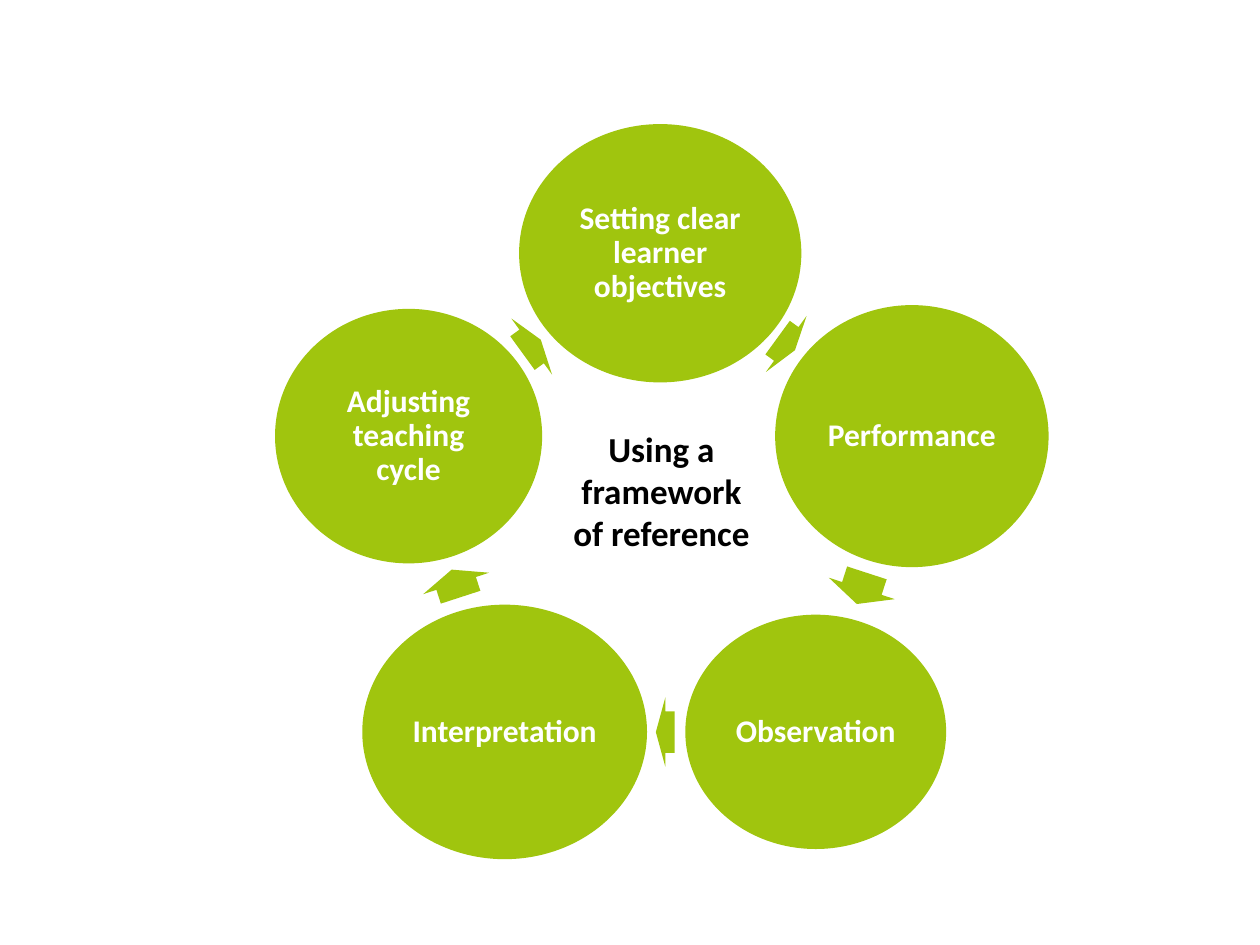
import math
import pptx
import pptx.util
import pptx.dml.color
import pptx.enum.shapes
import pptx.enum.text

Inches = pptx.util.Inches
Pt = pptx.util.Pt
RGBColor = pptx.dml.color.RGBColor
Shape = pptx.enum.shapes.MSO_SHAPE

GREEN = RGBColor(0xA0, 0xC5, 0x0E)
WHITE = RGBColor(0xFF, 0xFF, 0xFF)
BLACK = RGBColor(0x00, 0x00, 0x00)

STAGE_FONT = {"name": "Calibri", "size": Pt(18), "bold": True}
CAPTION_FONT = {"name": "Calibri", "size": Pt(20), "bold": True}
STAGE_PARAGRAPH = {"alignment": pptx.enum.text.PP_ALIGN.CENTER, "line_spacing": 0.9}
CAPTION_PARAGRAPH = {"alignment": pptx.enum.text.PP_ALIGN.CENTER}
STAGE_FRAME = {
    "word_wrap": True,
    "vertical_anchor": pptx.enum.text.MSO_ANCHOR.MIDDLE,
    **{f"margin_{side}": Inches(0.03) for side in ("left", "top", "right", "bottom")},
}
CAPTION_FRAME = {"word_wrap": True}

# label, circle width and height, arrow width, arrow offset from the ring's centre
STAGES = [
    ("Setting clear learner objectives", 2.24, 2.05, 0.17, (1.0, -1.38)),
    ("Performance", 2.17, 2.08, 0.26, (1.6, 0.56)),
    ("Observation", 2.07, 1.86, 0.15, (0.04, 1.7)),
    ("Interpretation", 2.26, 2.02, 0.23, (-1.62, 0.52)),
    ("Adjusting teaching cycle", 2.12, 2.02, 0.18, (-1.02, -1.36)),
]
ARROW_HEIGHT = 0.55


def apply_format(target, values):
    for name, value in values.items():
        setattr(target, name, value)


def write_text(box, text, frame_format, paragraph_format, font_format, color):
    frame = box.text_frame
    apply_format(frame, frame_format)
    para = frame.paragraphs[0]
    apply_format(para, paragraph_format)
    span = para.add_run()
    span.text = text
    apply_format(span.font, font_format)
    span.font.color.rgb = color


def add_centred_shape(shapes, kind, center_x, center_y, width, height):
    shape = shapes.add_shape(
        kind,
        Inches(center_x - width / 2),
        Inches(center_y - height / 2),
        Inches(width),
        Inches(height),
    )
    shape.shadow.inherit = False
    shape.fill.solid()
    shape.fill.fore_color.rgb = GREEN
    shape.line.fill.background()
    return shape


def add_cycle(page, left, top, diameter):
    radius = diameter / 2
    center_x, center_y = left + radius, top + radius
    step = 360 / len(STAGES)
    shapes = page.shapes.add_group_shape().shapes
    for index, (label, width, height, arrow_width, offset) in enumerate(STAGES):
        angle = math.radians(index * step)
        circle = add_centred_shape(
            shapes,
            Shape.OVAL,
            center_x + radius * math.sin(angle),
            center_y - radius * math.cos(angle),
            width,
            height,
        )
        write_text(circle, label, STAGE_FRAME, STAGE_PARAGRAPH, STAGE_FONT, WHITE)
        arrow = add_centred_shape(
            shapes,
            Shape.RIGHT_ARROW,
            center_x + offset[0],
            center_y + offset[1],
            arrow_width,
            ARROW_HEIGHT,
        )
        arrow.adjustments[0] = 0.6
        arrow.adjustments[1] = 0.5
        arrow.rotation = (index + 0.5) * step


def add_caption(page, left, top, width, height):
    box = page.shapes.add_textbox(
        Inches(left), Inches(top), Inches(width), Inches(height)
    )
    write_text(
        box,
        "Using a framework of reference",
        CAPTION_FRAME,
        CAPTION_PARAGRAPH,
        CAPTION_FONT,
        BLACK,
    )


def main():
    deck = pptx.Presentation()
    deck.slide_width = Inches(10)
    deck.slide_height = Inches(7.5)
    page = deck.slides.add_slide(deck.slide_layouts[6])
    add_cycle(page, 3.14, 2.01, 4.2)
    add_caption(page, 4.4, 3.34, 1.7, 1.11)
    deck.save("out.pptx")


if __name__ == "__main__":
    main()
